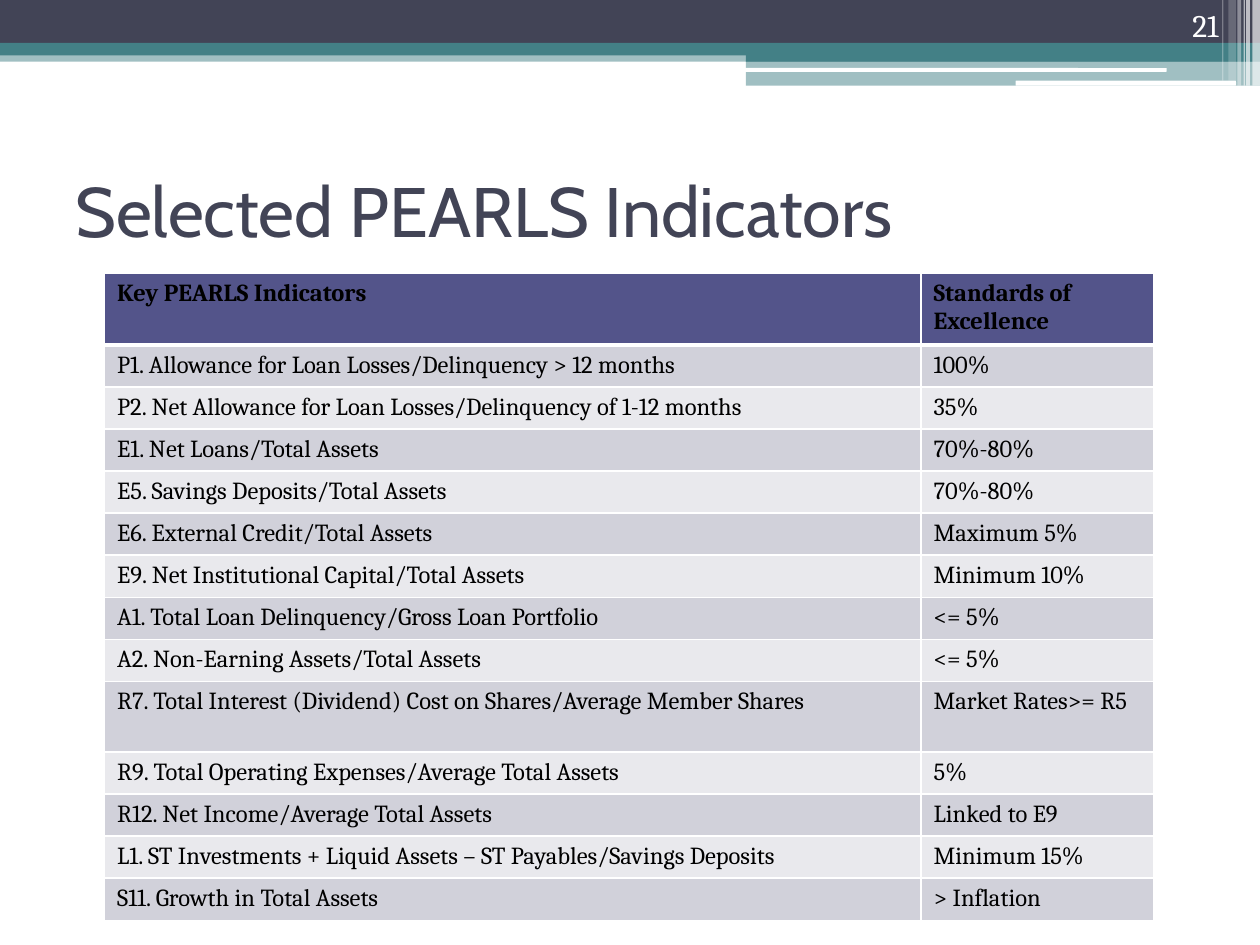
from lxml import etree
from pptx import Presentation
from pptx.dml import color
from pptx.enum import shapes, text
from pptx.oxml import ns
from pptx.util import Inches, Pt

COLORS = {
    "navy": "424456",
    "teal": "438086",
    "white": "FFFFFF",
    "black": "000000",
    "header": "53548A",
    "odd_row": "D1D1DA",
    "even_row": "E9E9ED",
}

BANDS = [
    (0, 0.4, 10, 0.09, "teal", 50),
    (0, 0, 10, 0.34, "navy", 100),
    (0, 0.34, 10, 0.1, "teal", 100),
    (5.92, 0.39, 4.08, 0.1, "teal", 100),
    (5.92, 0.48, 4.08, 0.2, "teal", 50),
]
ROUNDED_BARS = [(5.91, 0.54, 3.35, 0.03), (8.06, 0.64, 1.75, 0.04)]
STRIPES = [
    (9.94, 0.06, 0.68, 65),
    (9.89, 0.03, 0.68, 65),
    (9.87, 0.01, 0.68, 60),
    (9.82, 0.03, 0.68, 40),
    (9.75, 0.06, 0.64, 20),
    (9.7, 0.01, 0.64, 30),
]

INDICATORS = [
    ("Key PEARLS Indicators", "Standards of Excellence"),
    ("P1. Allowance for Loan Losses/Delinquency > 12 months", "100%"),
    ("P2. Net Allowance for Loan Losses/Delinquency of 1-12 months", "35%"),
    ("E1. Net Loans/Total Assets", "70%-80%"),
    ("E5. Savings Deposits/Total Assets", "70%-80%"),
    ("E6. External Credit/Total Assets", "Maximum 5%"),
    ("E9. Net Institutional Capital/Total Assets", "Minimum 10%"),
    ("A1. Total Loan Delinquency/Gross Loan Portfolio", "<= 5%"),
    ("A2. Non-Earning Assets/Total Assets", "<= 5%"),
    ("R7. Total Interest (Dividend) Cost on Shares/Average Member Shares", "Market Rates>= R5"),
    ("R9. Total Operating Expenses/Average Total Assets", "5%"),
    ("R12. Net Income/Average Total Assets", "Linked to E9"),
    ("L1. ST Investments + Liquid Assets – ST Payables/Savings Deposits", "Minimum 15%"),
    ("S11. Growth in Total Assets", "> Inflation"),
]
COLUMN_WIDTHS = (6.48, 1.85)
ROW_HEIGHT = 0.33
TALL_ROW_HEIGHT = 0.56
TALL_ROWS = (0, 9)


def rgb(name):
    return color.RGBColor.from_string(COLORS[name])


def add_bar(slide, left, top, width, height, fill, opacity=100,
            kind=shapes.MSO_SHAPE.RECTANGLE):
    shape = slide.shapes.add_shape(
        kind, Inches(left), Inches(top), Inches(width), Inches(height))
    shape.shadow.inherit = False
    shape.line.fill.background()
    shape.fill.solid()
    shape.fill.fore_color.rgb = rgb(fill)
    if opacity < 100:
        fill_color = shape.fill._xPr.find(".//" + ns.qn("a:srgbClr"))
        etree.SubElement(fill_color, ns.qn("a:alpha"), val=str(opacity * 1000))


def style_font(paragraph, name, size, fill, bold=False):
    font = paragraph.font
    font.name = name
    font.size = Pt(size)
    font.bold = bold
    font.color.rgb = rgb(fill)


def add_text(slide, left, top, width, height, wording, font, size, fill, anchor, align):
    box = slide.shapes.add_textbox(
        Inches(left), Inches(top), Inches(width), Inches(height))
    frame = box.text_frame
    frame.word_wrap = True
    frame.vertical_anchor = anchor
    paragraph = frame.paragraphs[0]
    paragraph.text = wording
    paragraph.alignment = align
    style_font(paragraph, font, size, fill)


def set_border(cell, side, points):
    properties = cell._tc.get_or_add_tcPr()
    line = etree.SubElement(properties, ns.qn("a:ln" + side), w=str(Pt(points)))
    fill = etree.SubElement(line, ns.qn("a:solidFill"))
    etree.SubElement(fill, ns.qn("a:srgbClr"), val=COLORS["white"])


def style_cell(cell, wording, row_index):
    is_header = row_index == 0
    cell.text = wording
    style_font(cell.text_frame.paragraphs[0], "Cambria", 14, "black", is_header)
    widths = {"L": 1, "R": 1, "T": 3 if row_index == 1 else 1, "B": 3 if is_header else 1}
    for side, points in widths.items():
        set_border(cell, side, points)
    cell.fill.solid()
    band = "odd_row" if row_index % 2 else "even_row"
    cell.fill.fore_color.rgb = rgb("header" if is_header else band)


def add_indicator_table(slide):
    heights = [TALL_ROW_HEIGHT if index in TALL_ROWS else ROW_HEIGHT
               for index in range(len(INDICATORS))]
    table = slide.shapes.add_table(
        len(INDICATORS), len(COLUMN_WIDTHS), Inches(0.83), Inches(2.17),
        Inches(sum(COLUMN_WIDTHS)), Inches(sum(heights))).table
    for column, width in zip(table.columns, COLUMN_WIDTHS):
        column.width = Inches(width)
    for row_index, wordings in enumerate(INDICATORS):
        table.rows[row_index].height = Inches(heights[row_index])
        for column_index, wording in enumerate(wordings):
            style_cell(table.cell(row_index, column_index), wording, row_index)


def add_banner(slide):
    for band in BANDS:
        add_bar(slide, *band)
    for bar in ROUNDED_BARS:
        add_bar(slide, *bar, "white", kind=shapes.MSO_SHAPE.ROUNDED_RECTANGLE)
    for left, width, height, opacity in STRIPES:
        add_bar(slide, left, 0, width, height, "white", opacity)


def main():
    presentation = Presentation()
    presentation.slide_width = Inches(10)
    presentation.slide_height = Inches(7.5)
    slide = presentation.slides.add_slide(presentation.slide_layouts[6])
    add_banner(slide)
    add_text(slide, 0.5, 1.25, 9, 0.83, "Selected PEARLS Indicators", "Cabin", 40,
             "navy", text.MSO_ANCHOR.MIDDLE, text.PP_ALIGN.LEFT)
    add_indicator_table(slide)
    add_text(slide, 8.94, 0, 0.83, 0.4, "21", "Cambria", 18,
             "white", text.MSO_ANCHOR.BOTTOM, text.PP_ALIGN.RIGHT)
    presentation.save("out.pptx")


if __name__ == "__main__":
    main()
